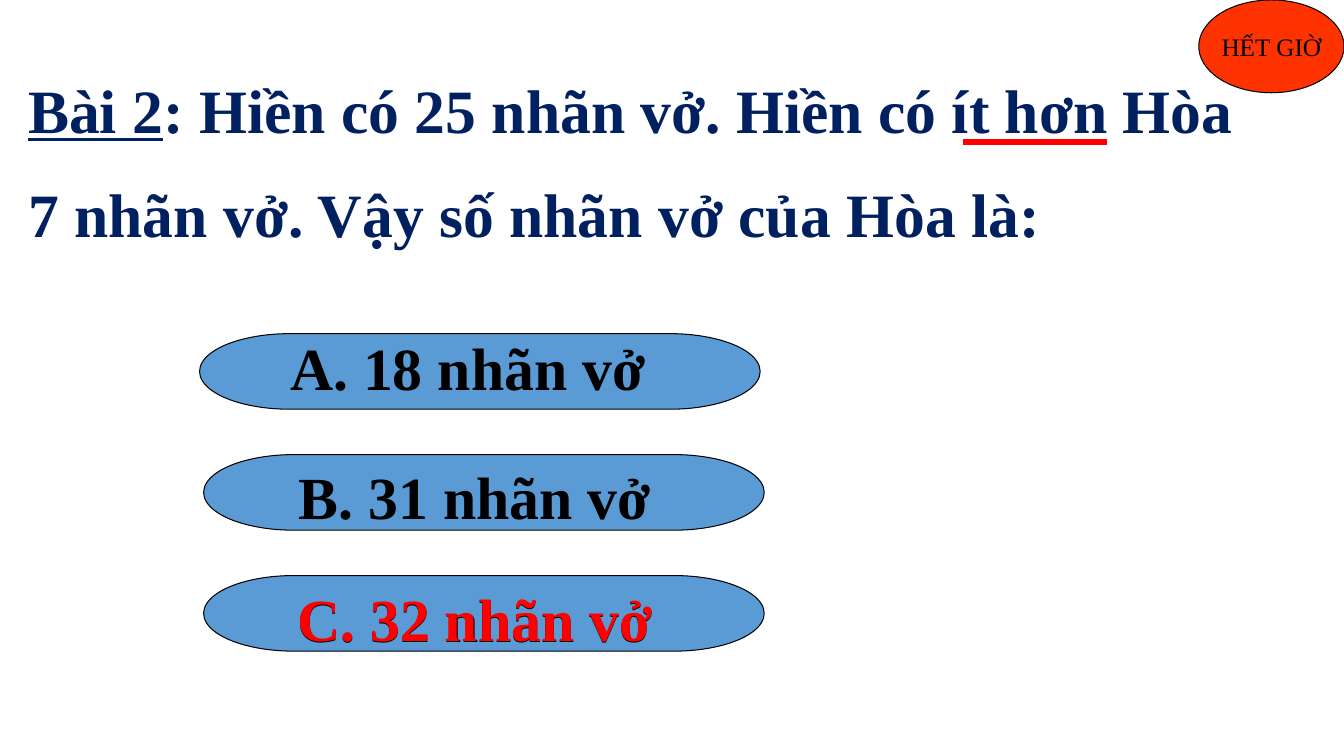
from lxml.etree import SubElement
from pptx import Presentation
from pptx.dml.color import RGBColor
from pptx.enum.shapes import MSO_CONNECTOR, MSO_SHAPE
from pptx.enum.text import MSO_ANCHOR, MSO_AUTO_SIZE, PP_ALIGN
from pptx.oxml.ns import qn
from pptx.util import Pt

PX = 9144  # 100 px to the inch
FONT = "Times New Roman"
COLORS = {
    "question": "002060",
    "answer": "000000",
    "correct": "FF0000",
    "pill": "5B9BD5",
    "outline": "000000",
    "timer": "FF3300",
    "timer_text": "000514",
}


def px(*lengths):
    return [length * PX for length in lengths]


def color(name):
    return RGBColor.from_string(COLORS[name])


def style_run(run, size, color_name, bold=True, underline=False):
    run.font.name = FONT
    run.font.size = Pt(size)
    run.font.bold = bold
    run.font.underline = underline
    run.font.color.rgb = color(color_name)


def set_half_line_before(paragraph):
    spacing = SubElement(paragraph._p.get_or_add_pPr(), qn("a:spcBef"))
    SubElement(spacing, qn("a:spcPct"), val="50000")


def add_text_box(slide, box):
    text_frame = slide.shapes.add_textbox(*px(*box)).text_frame
    text_frame.word_wrap = True
    text_frame.auto_size = MSO_AUTO_SIZE.SHAPE_TO_FIT_TEXT
    return text_frame


def add_filled_shape(slide, kind, box, fill):
    shape = slide.shapes.add_shape(kind, *px(*box))
    shape.shadow.inherit = False
    shape.fill.solid()
    shape.fill.fore_color.rgb = color(fill)
    shape.line.color.rgb = color("outline")
    shape.line.width = Pt(0.75)
    return shape


def add_question(slide, box):
    text_frame = add_text_box(slide, box)
    text_frame.text = (": Hiền có 25 nhãn vở. Hiền có ít hơn Hòa\n"
                       "7 nhãn vở. Vậy số nhãn vở của Hòa là:")
    first = text_frame.paragraphs[0]
    first.text = "Bài 2"
    first.add_run().text = ": Hiền có 25 nhãn vở. Hiền có ít hơn Hòa"
    for paragraph in text_frame.paragraphs:
        set_half_line_before(paragraph)
        for run in paragraph.runs:
            style_run(run, 44, "question")
    first.runs[0].font.underline = True


def add_key_phrase_underline(slide, box):
    left, top, width = box
    line = slide.shapes.add_connector(
        MSO_CONNECTOR.STRAIGHT, *px(left, top, left + width, top))
    line.line.color.rgb = color("correct")
    line.line.width = Pt(4.5)
    SubElement(line._element.spPr, qn("a:effectLst"))


def add_answer_label(slide, box, text, color_name):
    text_frame = add_text_box(slide, box)
    text_frame.text = text
    paragraph = text_frame.paragraphs[0]
    paragraph.alignment = PP_ALIGN.CENTER
    set_half_line_before(paragraph)
    style_run(paragraph.runs[0], 42.7, color_name)


def add_answer(slide, box, text, labels):
    """Draw a pill and its labels, each (dx, dy, width, color) from the pill's corner."""
    left, top = box[:2]
    add_filled_shape(slide, MSO_SHAPE.FLOWCHART_TERMINATOR, box, "pill")
    for dx, dy, width, color_name in labels:
        add_answer_label(slide, (left + dx, top + dy, width, 82), text, color_name)


def add_timer(slide, box):
    oval = add_filled_shape(slide, MSO_SHAPE.OVAL, box, "timer")
    text_frame = oval.text_frame
    text_frame.text = "HẾT GIỜ"
    text_frame.word_wrap = False
    text_frame.vertical_anchor = MSO_ANCHOR.MIDDLE
    paragraph = text_frame.paragraphs[0]
    paragraph.alignment = PP_ALIGN.CENTER
    style_run(paragraph.runs[0], 18, "timer_text", bold=False)


def add_quiz_slide(presentation):
    slide = presentation.slides.add_slide(presentation.slide_layouts[6])
    add_question(slide, (18, 66, 1282, 195))
    answers = [
        (198, "A. 18 nhãn vở", [(44, -8, 444, "answer")]),
        (202, "B. 31 nhãn vở", [(47, 0, 444, "answer")]),
        (202, "C. 32 nhãn vở", [(39, 2, 461, "answer"), (47, 1, 444, "correct")]),
    ]
    for index, (left, text, labels) in enumerate(answers):
        add_answer(slide, (left, 331 + 120 * index, 556, 75), text, labels)
    add_timer(slide, (1189, 0, 144, 92))
    add_key_phrase_underline(slide, (955, 141, 143))


def main():
    presentation = Presentation()
    presentation.slide_width, presentation.slide_height = px(1333, 750)
    add_quiz_slide(presentation)
    presentation.save("out.pptx")


if __name__ == "__main__":
    main()
